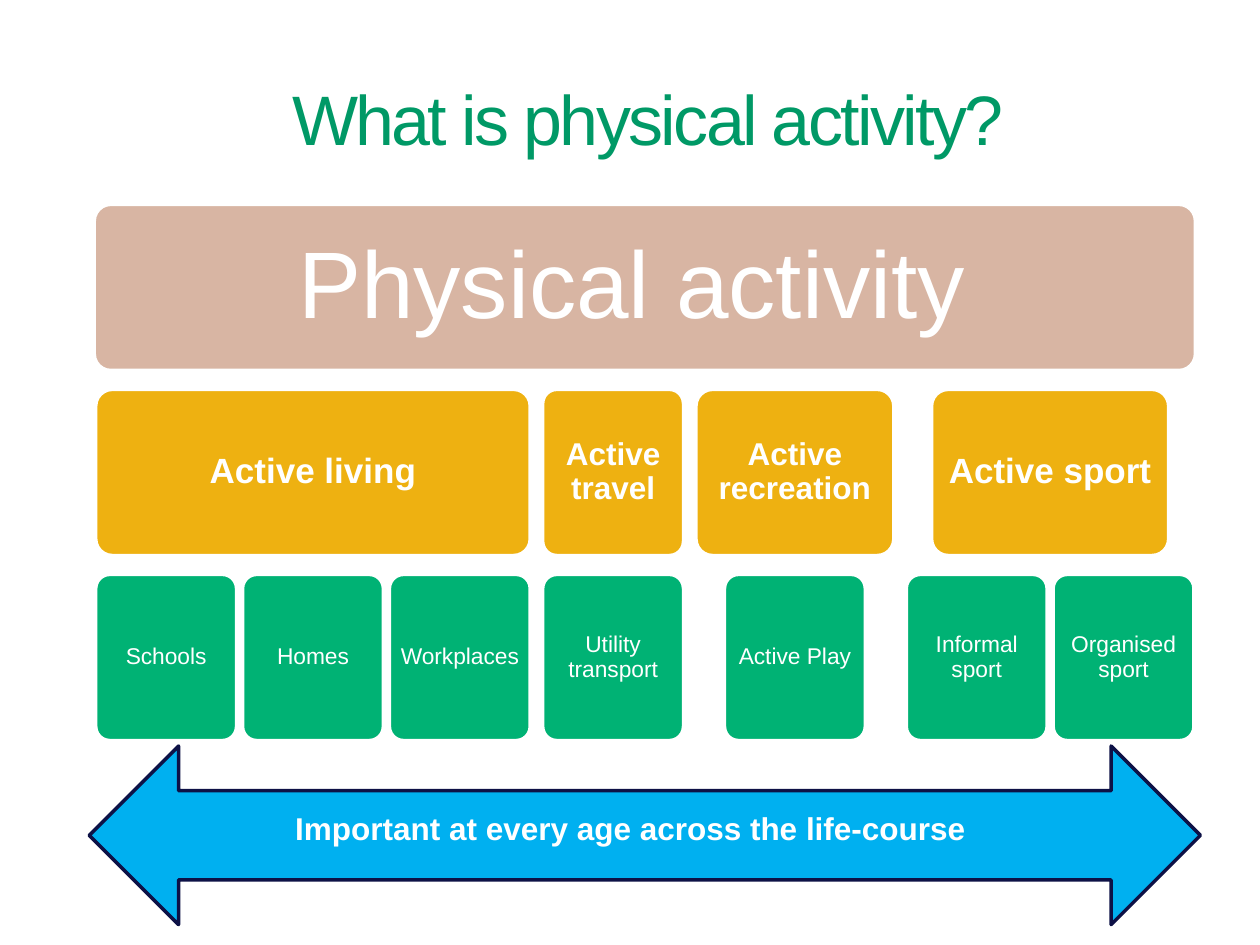
from pptx import Presentation
from pptx import util as u
from pptx.dml.color import RGBColor
from pptx.enum import shapes, text

WHITE, TITLE_GREEN, TAN = "FFFFFF", "009966", "D8B5A3"
AMBER, GREEN, SKY, NAVY = "EEB111", "00B274", "00B0F0", "0D1146"

LEFT, TOP, ROW_PITCH, ROW_HEIGHT = 1.93, 4.12, 3.73, 3.35
EXAMPLE_WIDTH, EXAMPLE_PITCH, DOMAIN_GAP = 2.84, 2.96, 0.25

DOMAINS = [
    ("Active living", 8.76, 20, ["Schools", "Homes", "Workplaces"]),
    ("Active travel", 2.84, 18, ["Utility transport"]),
    ("Active recreation", 3.99, 18, ["Active Play"]),
    ("Active sport", 4.78, 20, ["Informal sport", "Organised sport"]),
]


def color(hex_string):
    """Turn a hex string into a colour."""
    return RGBColor.from_string(hex_string)


def write(holder, wording, size, ink, bold=False, inset=0.0,
          anchor=text.MSO_ANCHOR.TOP, align=text.PP_ALIGN.CENTER):
    """Fill a shape with one formatted paragraph and return that paragraph."""
    frame = holder.text_frame
    frame.text = wording
    frame.word_wrap = True
    frame.vertical_anchor = anchor
    frame.margin_left = frame.margin_right = u.Cm(inset)
    frame.margin_top = frame.margin_bottom = u.Cm(inset)
    paragraph = frame.paragraphs[0]
    paragraph.alignment = align
    font = paragraph.runs[0].font
    font.name, font.size, font.bold = "Arial", u.Pt(size), bold
    font.color.rgb = color(ink)
    return paragraph


def add_label(slide, place, wording, size, ink, **style):
    """Add a text box and return its paragraph."""
    label = slide.shapes.add_textbox(*map(u.Cm, place))
    return write(label, wording, size, ink, **style)


def add_outlined(slide, kind, place, fill, outline):
    """Add a preset shape with a solid fill and a 2 pt outline."""
    block = slide.shapes.add_shape(kind, *map(u.Cm, place))
    block.shadow.inherit = False
    block.fill.solid()
    block.fill.fore_color.rgb = color(fill)
    block.line.color.rgb = color(outline)
    block.line.width = u.Pt(2)
    return block


def add_tile(slide, row, left, width, fill, wording, size, bold=False, inset=0.1):
    """Add a rounded tile with centred white text in the given row."""
    place = (left, TOP + row * ROW_PITCH, width, ROW_HEIGHT)
    tile = add_outlined(slide, shapes.MSO_SHAPE.ROUNDED_RECTANGLE, place, fill, WHITE)
    tile.adjustments[0] = 0.1
    label = write(tile, wording, size, WHITE, bold, inset, text.MSO_ANCHOR.MIDDLE)
    label.line_spacing = 0.9


def add_domains(slide):
    """Add each domain centred above its row of examples."""
    left = LEFT
    for domain, width, size, examples in DOMAINS:
        examples_width = (len(examples) - 1) * EXAMPLE_PITCH + EXAMPLE_WIDTH
        slot = max(width, examples_width)
        add_tile(slide, 1, left + (slot - width) / 2, width, AMBER, domain, size, True)
        first = left + (slot - examples_width) / 2
        for index, example in enumerate(examples):
            add_tile(slide, 2, first + index * EXAMPLE_PITCH, EXAMPLE_WIDTH,
                     GREEN, example, 13)
        left += slot + DOMAIN_GAP


def main():
    """Build the slide and save it."""
    deck = Presentation()
    deck.slide_width, deck.slide_height = u.Cm(25.4), u.Cm(19.05)
    slide = deck.slides.add_slide(deck.slide_layouts[6])

    title = add_label(slide, (5.89, 1.52, 18.29, 1.8), "What is physical activity?",
                      40, TITLE_GREEN, align=text.PP_ALIGN.LEFT)
    title.runs[0].font._element.set("spc", "-150")

    add_tile(slide, 0, 1.9, 22.2, TAN, "Physical activity ", 54, inset=0.68)
    add_domains(slide)
    add_outlined(slide, shapes.MSO_SHAPE.LEFT_RIGHT_ARROW,
                 (1.8, 15.04, 22.4, 3.6), SKY, NAVY)
    add_label(slide, (2.21, 16.18, 21, 1.27),
              "Important at every age across the life-course", 18, WHITE,
              bold=True, inset=0.13)
    deck.save("out.pptx")


if __name__ == "__main__":
    main()
